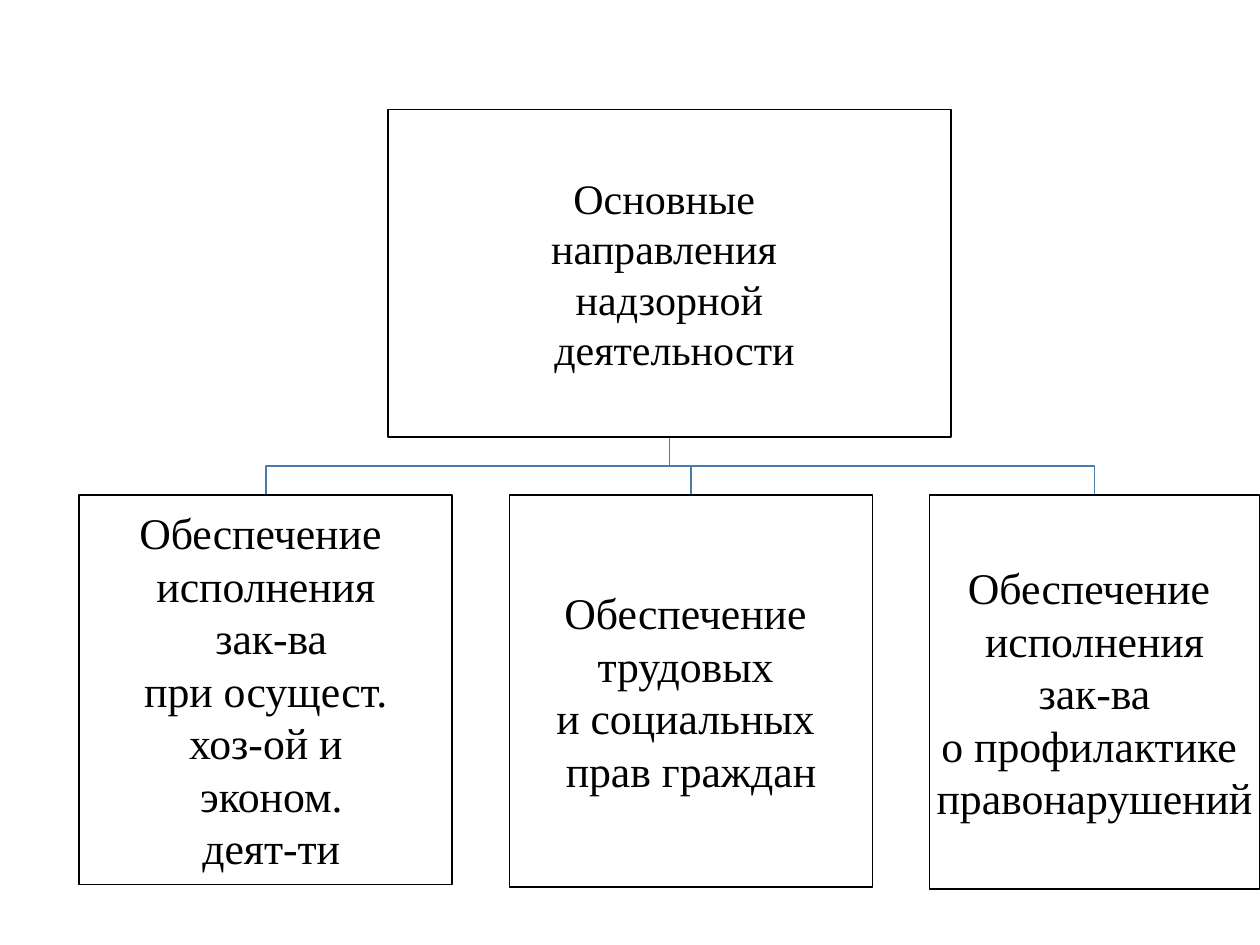
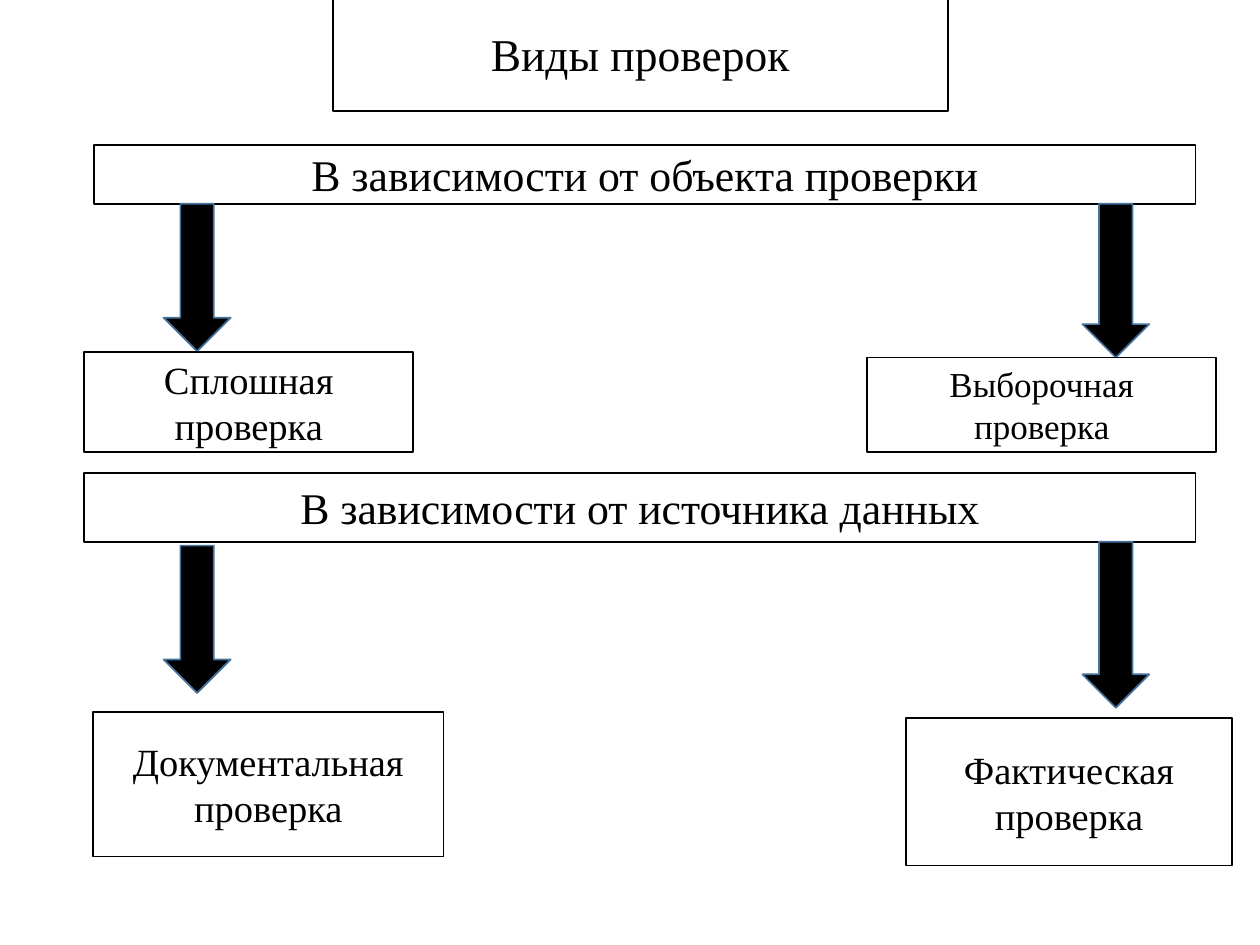
from dataclasses import dataclass

from pptx import Presentation
from pptx.dml.color import RGBColor
from pptx.enum.shapes import MSO_AUTO_SHAPE_TYPE as ShapeType
from pptx.enum.text import MSO_ANCHOR as Anchor, PP_ALIGN as Align
from pptx.shapes.autoshape import Shape
from pptx.slide import Slide
from pptx.util import Cm, Pt


@dataclass(frozen=True)
class Theme:
    paper: RGBColor = RGBColor(0xFF, 0xFF, 0xFF)
    ink: RGBColor = RGBColor(0x00, 0x00, 0x00)
    connector: RGBColor = RGBColor(0x49, 0x7C, 0xAB)
    arrow_edge: RGBColor = RGBColor(0x43, 0x73, 0x9E)
    font: str = "Times New Roman"
    line: float = 1
    title: float = 26
    heading: float = 25
    root: float = 24
    label: float = 22
    small: float = 20


@dataclass(frozen=True)
class Box:
    left: float
    top: float
    width: float
    height: float
    lines: tuple[str, ...]
    size: float
    inset: float | None = None

    @property
    def center(self) -> float:
        return self.left + self.width / 2

    @property
    def bottom(self) -> float:
        return self.top + self.height


@dataclass(frozen=True)
class Arrow:
    left: float
    top: float
    height: float
    width: float = 1.35


THEME = Theme()
TIGHT = 0.05
GAP = 1.15

ROOT = Box(7.82, 2.21, 11.35, 6.6,
           ("Основные ", "направления ", "надзорной", " деятельности"), THEME.root, TIGHT)
BRANCHES_LEFT, BRANCHES_TOP = 1.6, 9.98
BRANCHES = (
    (7.52, 7.85, ("Обеспечение ", "исполнения", " зак-ва", " при осущест. ",
                  "хоз-ой и", " эконом.", " деят-ти")),
    (7.32, 7.9, ("Обеспечение ", "трудовых ", "и социальных ", "прав граждан")),
    (6.65, 7.95, ("Обеспечение ", "исполнения", " зак-ва ", "о профилактике ",
                  "правонарушений")),
)

LEFT_ARROW, RIGHT_ARROW = 3.3, 21.82
CHECKS = (
    Box(6.71, -0.1, 12.4, 2.34, ("Виды проверок",), THEME.title),
    Box(1.9, 2.92, 22.2, 1.19, ("В зависимости от объекта проверки",), THEME.heading),
    Arrow(LEFT_ARROW, 4.11, 2.97),
    Arrow(RIGHT_ARROW, 4.11, 3.1),
    Box(1.7, 7.09, 6.63, 2.03, ("Сплошная проверка",), THEME.label),
    Box(17.48, 7.21, 7.04, 1.9, ("Выборочная проверка",), THEME.small),
    Box(1.7, 9.53, 22.4, 1.4, ("В зависимости от источника данных",), THEME.heading),
    Arrow(LEFT_ARROW, 11, 2.97),
    Arrow(RIGHT_ARROW, 10.92, 3.35),
    Box(1.88, 14.35, 7.06, 2.92, ("Документальная проверка",), THEME.label),
    Box(18.26, 14.48, 6.58, 2.97, ("Фактическая проверка",), THEME.label),
)


def style_outline(shape: Shape, color: RGBColor) -> None:
    shape.shadow.inherit = False
    shape.line.color.rgb = color
    shape.line.width = Pt(THEME.line)


def add_filled(slide: Slide, kind: ShapeType, item: Box | Arrow,
               fill: RGBColor, edge: RGBColor) -> Shape:
    bounds = (Cm(value) for value in (item.left, item.top, item.width, item.height))
    shape = slide.shapes.add_shape(kind, *bounds)
    shape.fill.solid()
    shape.fill.fore_color.rgb = fill
    style_outline(shape, edge)
    return shape


def add_box(slide: Slide, box: Box) -> None:
    shape = add_filled(slide, ShapeType.RECTANGLE, box, THEME.paper, THEME.ink)
    frame = shape.text_frame
    frame.word_wrap = True
    frame.vertical_anchor = Anchor.MIDDLE
    if box.inset is not None:
        for side in ("left", "top", "right", "bottom"):
            setattr(frame, f"margin_{side}", Cm(box.inset))
    font_format = {"name": THEME.font, "size": Pt(box.size)}
    for index, line in enumerate(box.lines):
        paragraph = frame.add_paragraph() if index else frame.paragraphs[0]
        paragraph.alignment = Align.CENTER
        run = paragraph.add_run()
        run.text = line
        for name, value in font_format.items():
            setattr(run.font, name, value)
        run.font.color.rgb = THEME.ink


def add_arrow(slide: Slide, arrow: Arrow) -> None:
    add_filled(slide, ShapeType.DOWN_ARROW, arrow, THEME.ink, THEME.arrow_edge)


def add_branch_line(slide: Slide, parent: Box, child: Box) -> None:
    middle = (parent.bottom + child.top) / 2
    points = ((parent.center, middle), (child.center, middle), (child.center, child.top))
    builder = slide.shapes.build_freeform(Cm(parent.center), Cm(parent.bottom))
    builder.add_line_segments([(Cm(x), Cm(y)) for x, y in points], close=False)
    shape = builder.convert_to_shape()
    shape.fill.background()
    style_outline(shape, THEME.connector)


def build_directions(slide: Slide) -> None:
    children: list[Box] = []
    left = BRANCHES_LEFT
    for width, height, lines in BRANCHES:
        children.append(Box(left, BRANCHES_TOP, width, height, lines, THEME.heading, TIGHT))
        left += width + GAP
    for child in reversed(children):
        add_branch_line(slide, ROOT, child)
    for box in (ROOT, *children):
        add_box(slide, box)


def build_checks(slide: Slide) -> None:
    for item in CHECKS:
        if isinstance(item, Box):
            add_box(slide, item)
        else:
            add_arrow(slide, item)


def main() -> None:
    """Build the two slides on supervision directions and kinds of checks."""
    presentation = Presentation()
    presentation.slide_width, presentation.slide_height = Cm(25.4), Cm(19.05)
    blank = presentation.slide_layouts[6]
    for build in (build_directions, build_checks):
        build(presentation.slides.add_slide(blank))
    presentation.save("out.pptx")


if __name__ == "__main__":
    main()
